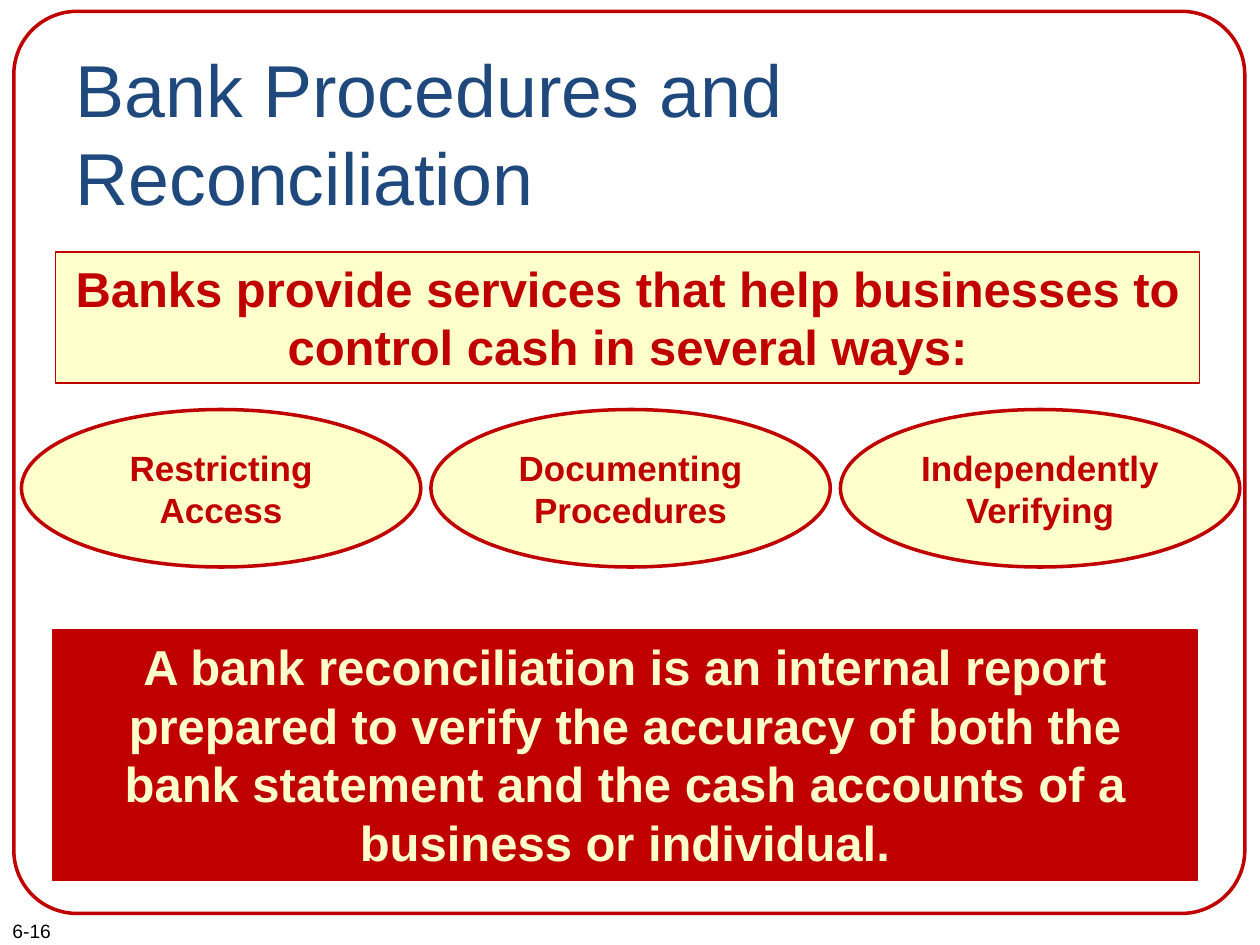
from dataclasses import dataclass

from pptx import Presentation
from pptx.dml.color import RGBColor
from pptx.enum.shapes import MSO_SHAPE
from pptx.enum.text import MSO_ANCHOR, MSO_AUTO_SIZE, PP_ALIGN
from pptx.util import Inches, Pt

RECT, OVAL, ROUND = MSO_SHAPE.RECTANGLE, MSO_SHAPE.OVAL, MSO_SHAPE.ROUNDED_RECTANGLE
TOP, MIDDLE = MSO_ANCHOR.TOP, MSO_ANCHOR.MIDDLE
LEFT, CENTER = PP_ALIGN.LEFT, PP_ALIGN.CENTER
FIXED = MSO_AUTO_SIZE.NONE


@dataclass(frozen=True)
class Theme:
    font: str = "Arial"
    red: str = "C00000"
    cream: str = "FFFFCC"
    navy: str = "1F497D"
    black: str = "000000"
    title: float = 42
    lead: float = 28
    label: float = 20
    page: float = 11


@dataclass(frozen=True)
class Box:
    kind: int
    text: str
    left: float
    top: float
    width: float
    height: float
    fill: str
    ink: str
    size: float
    line: float
    anchor: int


THEME = Theme()


def rgb(code: str) -> RGBColor:
    return RGBColor.from_string(code)


def write(frame, text: str, size: float, ink: str, align=LEFT,
          anchor=TOP, bold: bool = False) -> None:
    """Fill a text frame with one formatted paragraph."""
    frame.text = text
    frame.word_wrap = True
    frame.auto_size = FIXED
    frame.vertical_anchor = anchor
    para = frame.paragraphs[0]
    para.alignment = align
    font = para.runs[0].font
    font.name, font.size, font.bold = THEME.font, Pt(size), bold
    font.color.rgb = rgb(ink)


def outline(shape, width: float) -> None:
    shape.shadow.inherit = False
    shape.line.color.rgb = rgb(THEME.red)
    shape.line.width = Pt(width)


def draw(slide, box: Box) -> None:
    shape = slide.shapes.add_shape(
        box.kind, Inches(box.left), Inches(box.top),
        Inches(box.width), Inches(box.height))
    outline(shape, box.line)
    shape.fill.solid()
    shape.fill.fore_color.rgb = rgb(box.fill)
    write(shape.text_frame, box.text, box.size, box.ink, CENTER, box.anchor, True)


def main() -> None:
    deck = Presentation()
    deck.slide_width, deck.slide_height = Inches(10), Inches(7.5)
    slide = deck.slides.add_slide(deck.slide_layouts[5])

    # Page number and rounded frame
    page = slide.shapes.add_textbox(Inches(0), Inches(7.25), Inches(1.42), Inches(0.29))
    write(page.text_frame, "6-16", THEME.page, THEME.black)
    frame = slide.shapes.add_shape(
        ROUND, Inches(0.11), Inches(0.09), Inches(9.77), Inches(7.16))
    frame.adjustments[0] = 0.07
    frame.fill.background()
    outline(frame, 2)

    # Title
    title = slide.shapes.title
    title.left, title.top = Inches(0.5), Inches(0.3)
    title.width, title.height = Inches(9), Inches(1.25)
    write(title.text_frame, "Bank Procedures and Reconciliation",
          THEME.title, THEME.navy)

    # Lead statement
    draw(slide, Box(
        RECT, "Banks provide services that help businesses to control cash "
        "in several ways:", 0.44, 2, 9.08, 1.04,
        THEME.cream, THEME.red, THEME.lead, 0.75, TOP))

    # Row of control methods
    labels = ("Restricting Access", "Documenting Procedures", "Independently Verifying")
    for col, label in enumerate(labels):
        draw(slide, Box(
            OVAL, label, 0.17 + 3.25 * col, 3.25, 3.17, 1.25,
            THEME.cream, THEME.red, THEME.label, 2, MIDDLE))

    # Definition
    draw(slide, Box(
        RECT, "A bank reconciliation is an internal report prepared to verify "
        "the accuracy of both the bank statement and the cash accounts of a "
        "business or individual.", 0.42, 5, 9.08, 1.99,
        THEME.red, THEME.cream, THEME.lead, 0.75, TOP))

    deck.save("out.pptx")


if __name__ == "__main__":
    main()
